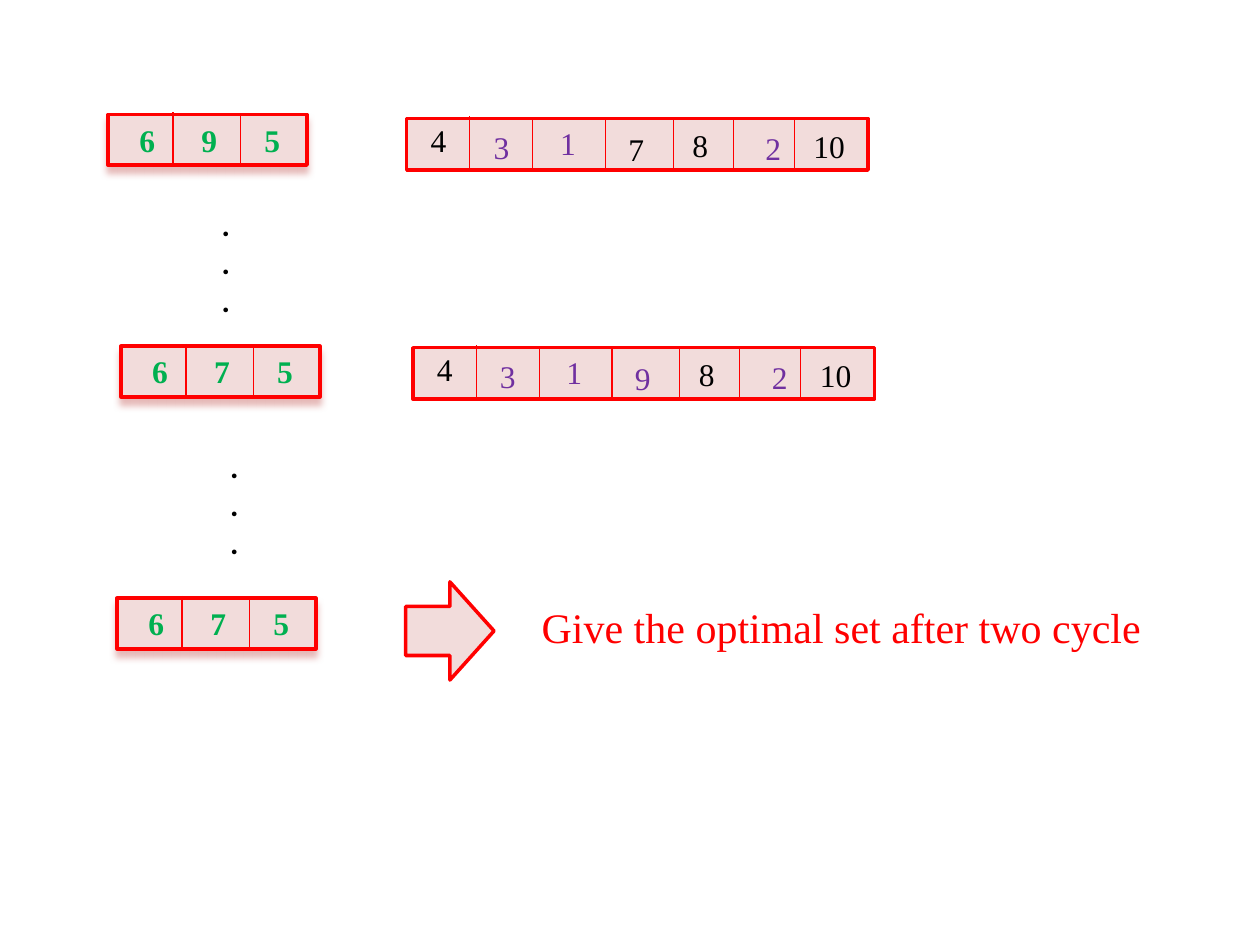
import pptx
import pptx.dml.color
import pptx.enum.shapes
import pptx.enum.text
import pptx.oxml
import pptx.oxml.ns
import pptx.util
from pptx.util import Cm

COLORS = {
    "red": "FF0000",
    "pink": "F2DCDB",
    "shadow": "E6B9B8",
    "green": "00B050",
    "purple": "7030A0",
    "black": "000000",
}
SERIF = "Times New Roman"
SHAPE = pptx.enum.shapes.MSO_SHAPE

# Offsets in cm from the top left corner of a box
SET_DIVIDERS = [(1.31, -0.05), (2.67, 0)]
SET_DIGITS = [(0.38, 0), (1.63, 0), (2.9, 0)]
ROW_DIVIDERS = [(1.27, -0.05), (2.54, 0), (4.01, 0), (5.37, 0), (6.58, 0), (7.81, 0)]
ROW_DIGITS = [(0.23, -0.08), (1.5, 0.06), (2.84, -0.01), (4.22, 0.1),
              (5.51, 0.03), (6.98, 0.09), (7.95, 0.05)]


def rgb(name):
    return pptx.dml.color.RGBColor.from_string(COLORS[name])


def add_effects(sp, inner=""):
    sp._element.spPr.append(pptx.oxml.parse_xml(
        f'<a:effectLst {pptx.oxml.ns.nsdecls("a")}>{inner}</a:effectLst>'))


def add_box(s, kind, x, y, w, h):
    sp = s.shapes.add_shape(kind, Cm(x), Cm(y), Cm(w), Cm(h))
    sp.fill.solid()
    sp.fill.fore_color.rgb = rgb("pink")
    sp.line.color.rgb = rgb("red")
    sp.line.width = pptx.util.Pt(2)
    sp.shadow.inherit = False
    return sp


def add_soft_shadow(sp):
    """Replace the empty effect list by a shadow falling straight down."""
    spPr = sp._element.spPr
    spPr.remove(spPr.find(pptx.oxml.ns.qn("a:effectLst")))
    add_effects(sp, '<a:outerShdw blurRad="50800" dist="50800" dir="5400000" '
                    'algn="t" rotWithShape="0">'
                    f'<a:srgbClr val="{COLORS["shadow"]}"/></a:outerShdw>')


def add_divider(s, x, top, bottom):
    line = s.shapes.add_connector(pptx.enum.shapes.MSO_CONNECTOR.STRAIGHT,
                                  Cm(x), Cm(top), Cm(x), Cm(bottom))
    line.line.color.rgb = rgb("red")
    line.line.width = pptx.util.Pt(0.75)
    add_effects(line)


def add_text(s, text, x, y, w, h, color, size=18, bold=False, font=SERIF):
    tf = s.shapes.add_textbox(Cm(x), Cm(y), Cm(w), Cm(h)).text_frame
    tf.word_wrap = False
    tf.auto_size = pptx.enum.text.MSO_AUTO_SIZE.SHAPE_TO_FIT_TEXT
    tf.text = text
    for p in tf.paragraphs:
        p.font.name = font
        p.font.size = pptx.util.Pt(size)
        p.font.bold = bold
        p.font.color.rgb = rgb(color)


def add_cells(s, x, y, h, dividers, places, digits, colors, bold=False):
    """Divide a box into cells and write one number in each."""
    for dx, dy in dividers:
        add_divider(s, x + dx, y + dy, y + h)
    for (dx, dy), digit, color in zip(places, digits, colors):
        w = 0.84 if len(digit) == 1 else 1.17
        add_text(s, digit, x + dx, y + dy, w, 1.02, color, bold=bold)


def add_set(s, x, y, digits):
    add_soft_shadow(add_box(s, SHAPE.RECTANGLE, x, y, 4.01, 1.02))
    add_cells(s, x, y, 1.02, SET_DIVIDERS, SET_DIGITS, digits, ["green"] * 3, bold=True)


def add_row(s, x, y, digits, purple):
    add_box(s, SHAPE.RECTANGLE, x, y, 9.3, 1.04)
    colors = ["purple" if d in purple else "black" for d in digits]
    add_cells(s, x, y, 1.04, ROW_DIVIDERS, ROW_DIGITS, digits, colors)


def add_dots(s, x, y):
    add_text(s, ".\n.\n.", x, y, 0.69, 2.57, "black", bold=True, font="Calibri")


def main():
    prs = pptx.Presentation()
    prs.slide_width, prs.slide_height = Cm(25.4), Cm(19.05)
    s = prs.slides.add_slide(prs.slide_layouts[6])

    add_set(s, 2.18, 2.31, "695")
    add_row(s, 8.2, 2.39, ["4", "3", "1", "7", "8", "2", "10"], "312")
    add_dots(s, 4.22, 4.01)

    add_set(s, 2.44, 6.98, "675")
    add_row(s, 8.33, 7.01, ["4", "3", "1", "9", "8", "2", "10"], "3192")
    add_dots(s, 4.39, 8.89)

    add_set(s, 2.36, 12.06, "675")
    add_box(s, SHAPE.RIGHT_ARROW, 8.18, 11.73, 1.78, 1.98)
    add_text(s, "Give the optimal set after two cycle", 10.67, 12.01, 12.7, 1.27,
             "red", size=24)

    prs.save("out.pptx")


if __name__ == "__main__":
    main()
